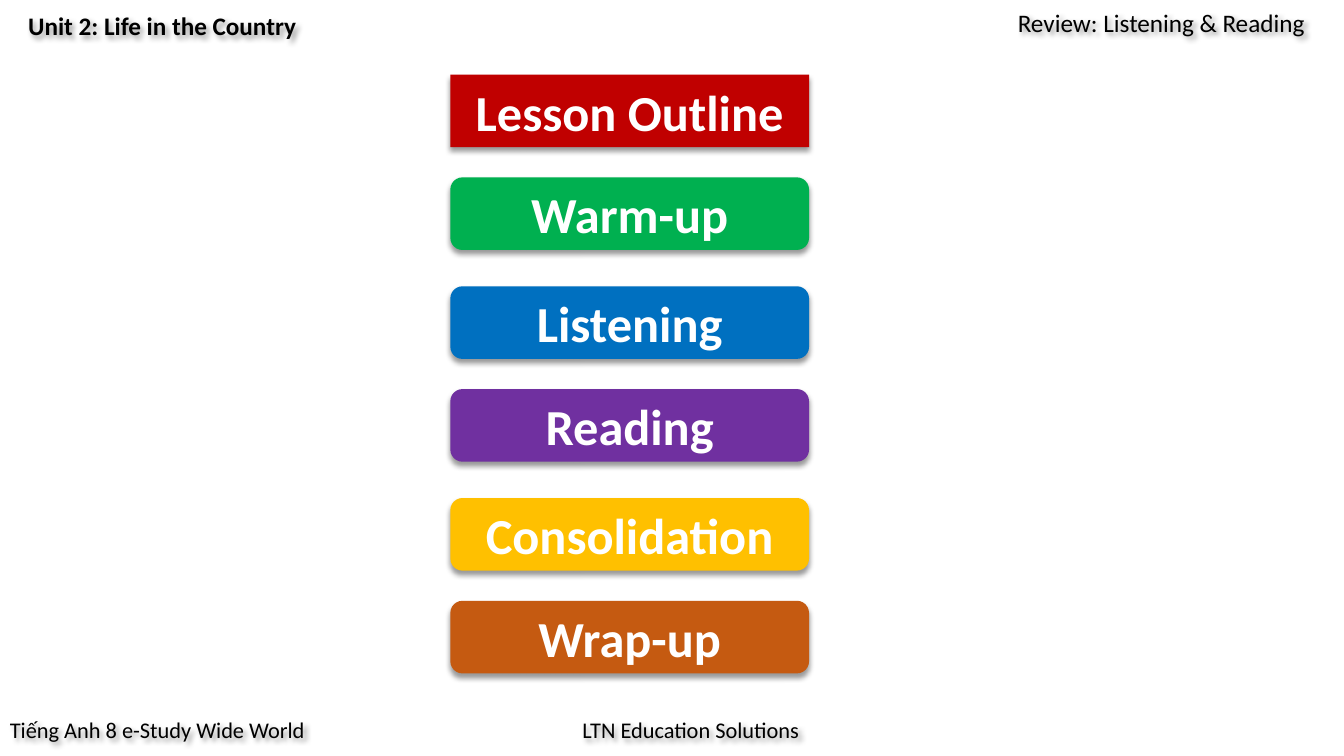
from dataclasses import dataclass

from lxml import etree
from pptx import Presentation
from pptx import util as u
from pptx.dml import color
from pptx.enum import shapes, text
from pptx.oxml import ns


@dataclass(frozen=True)
class Theme:
    """Hold the colours, font and type sizes of the slide."""
    font: str = "Calibri"
    ink: str = "000000"
    paper: str = "FFFFFF"
    stage_size: int = 36
    header_size: int = 18
    footer_size: int = 16
    shadow_blur: int = 4
    shadow_distance: int = 3
    shadow_alpha: int = 40


THEME = Theme()
STAGES = [
    ("Lesson Outline", "C00000"),
    ("Warm-up", "00B050"),
    ("Listening", "0070C0"),
    ("Reading", "7030A0"),
    ("Consolidation", "FFC000"),
    ("Wrap-up", "C55A11"),
]


def cast_shadow(part, degrees):
    """Give a part a soft shadow falling in the given direction."""
    part.shadow.inherit = False
    effects = part.element.spPr.find(ns.qn("a:effectLst"))
    shadow = etree.SubElement(
        effects, ns.qn("a:outerShdw"),
        blurRad=str(u.Pt(THEME.shadow_blur)), dist=str(u.Pt(THEME.shadow_distance)),
        dir=str(degrees * 60000), algn="t", rotWithShape="0")
    tint = etree.SubElement(shadow, ns.qn("a:srgbClr"), val=THEME.ink)
    etree.SubElement(tint, ns.qn("a:alpha"), val=str(THEME.shadow_alpha * 1000))


def write(part, words, size, ink, bold=False, align=text.PP_ALIGN.LEFT):
    """Write one formatted line into a part."""
    part.text_frame.text = words
    line = part.text_frame.paragraphs[0]
    line.alignment = align
    font = line.runs[0].font
    font.name, font.size, font.bold = THEME.font, u.Pt(size), bold
    font.color.rgb = color.RGBColor.from_string(ink)


def add_label(slide, box, words, size, bold=False, wrap=False):
    """Place a running header or footer label in the given box."""
    label = slide.shapes.add_textbox(*map(u.Cm, box))
    label.text_frame.word_wrap = wrap
    write(label, words, size, THEME.ink, bold)
    cast_shadow(label, 45)


def add_header(slide, left, top, width):
    """Place the unit name and the lesson name along the top."""
    add_label(slide, (left + 0.46, top + 0.13, 7.34, 1.02),
              "Unit 2: Life in the Country", THEME.header_size, bold=True)
    add_label(slide, (left + width - 8.47, top + 0.05, 8.18, 1.02),
              "Review: Listening & Reading", THEME.header_size, wrap=True)


def add_footer(slide, left, top):
    """Place the book name and the publisher along the bottom."""
    add_label(slide, (left, top, 8.15, 0.94),
              "Tiếng Anh 8 e-Study Wide World", THEME.footer_size)
    add_label(slide, (left + 14.43, top, 6.25, 0.94),
              "LTN Education Solutions", THEME.footer_size)


def round_title(slide, box):
    """Move the title into the box and give it a rounded outline."""
    title = slide.shapes.title
    title.left, title.top, title.width, title.height = box
    outline = etree.Element(ns.qn("a:prstGeom"), prst="roundRect")
    etree.SubElement(outline, ns.qn("a:avLst"))
    title.element.spPr.insert(1, outline)
    return title


def add_outline(slide, left, top, width, height):
    """Stack the title and the lesson stages in pairs down the box."""
    bar_height, step = 1.83, 2.59
    pair_step = (height - bar_height - step) / 2
    for index, (words, fill) in enumerate(STAGES):
        pair, second = divmod(index, 2)
        box = [u.Cm(length) for length in
               (left, top + pair * pair_step + second * step, width, bar_height)]
        if index == 0:
            bar = round_title(slide, box)
        else:
            bar = slide.shapes.add_shape(shapes.MSO_SHAPE.ROUNDED_RECTANGLE, *box)
        bar.fill.solid()
        bar.fill.fore_color.rgb = color.RGBColor.from_string(fill)
        bar.line.fill.background()
        cast_shadow(bar, 90)
        frame = bar.text_frame
        frame.word_wrap = True
        frame.auto_size = text.MSO_AUTO_SIZE.NONE
        frame.vertical_anchor = text.MSO_ANCHOR.MIDDLE
        write(bar, words, THEME.stage_size, THEME.paper, True, text.PP_ALIGN.CENTER)


def main():
    """Build the lesson outline slide and save it."""
    deck = Presentation()
    deck.slide_width, deck.slide_height = u.Cm(33.87), u.Cm(19.05)
    slide = deck.slides.add_slide(deck.slide_layouts[5])
    add_header(slide, 0, 0, 33.87)
    add_outline(slide, 11.35, 1.88, 9.04, 15.09)
    add_footer(slide, 0, 17.91)
    deck.save("out.pptx")


if __name__ == "__main__":
    main()
